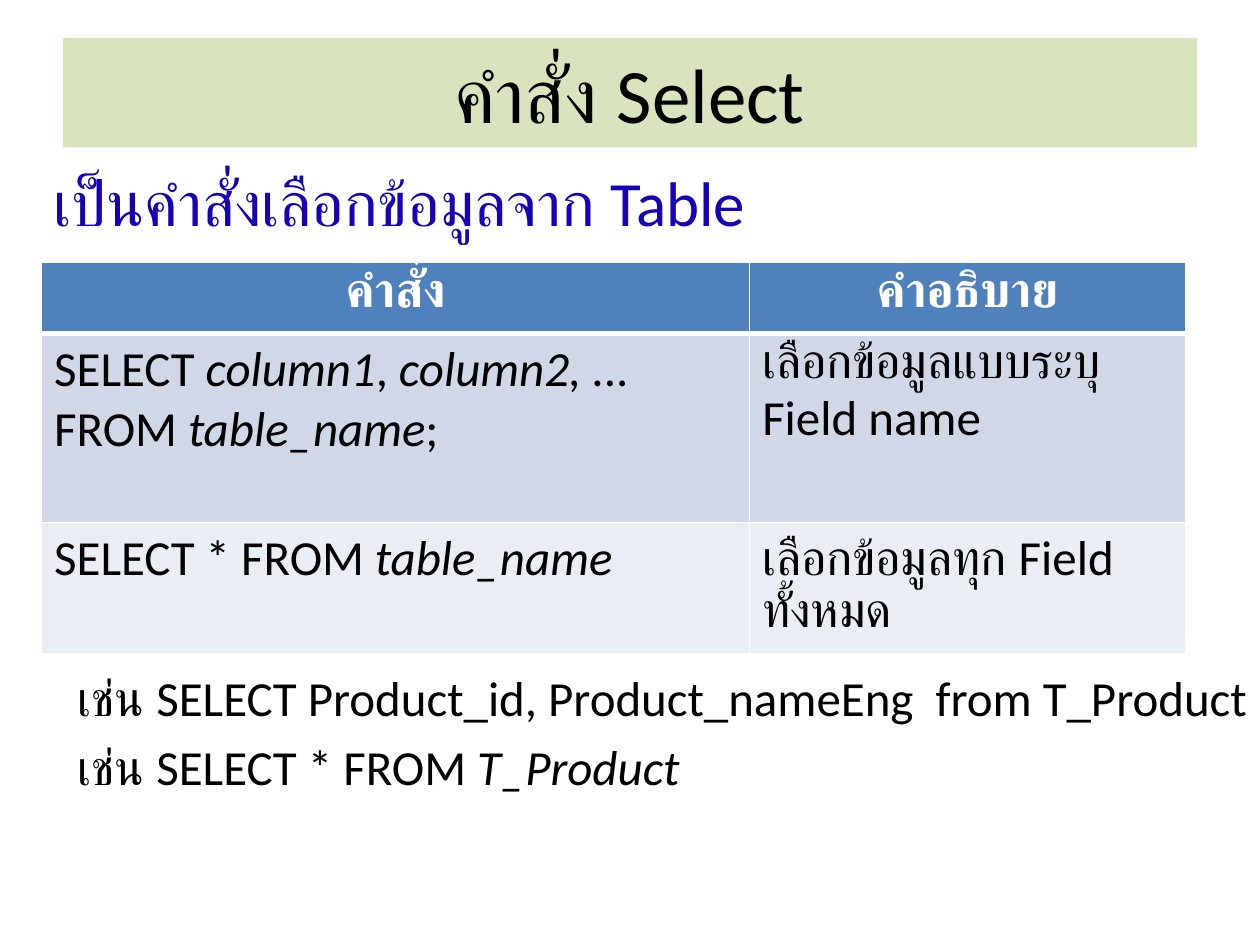
from lxml.etree import SubElement
from pptx import Presentation
from pptx.dml.color import RGBColor
from pptx.enum.shapes import MSO_SHAPE
from pptx.enum.text import MSO_ANCHOR, PP_ALIGN
from pptx.oxml.ns import qn
from pptx.util import Inches, Pt

FONT = "Calibri"
BLACK, WHITE, BLUE = "000000", "FFFFFF", "1600B8"
TITLE_GREEN, HEADER_BLUE = "D7E4BD", "4F81BD"
ROW_FILLS = [HEADER_BLUE, "D0D8E8", "E9EDF4"]
COLUMN_WIDTHS = [5.62, 3.46]
ROW_HEIGHTS = [0.56, 1.5, 1.04]

# A cell is a list of (text, italic) runs; "\n" is a line break
COMMAND_ROWS = [
    [[("คำสั่ง", False)], [("คำอธิบาย", False)]],
    [
        [("SELECT ", False), ("column1", True), (",", False),
         (" column2, ...", True), ("\n", False),
         ("FROM ", False), ("table_name", True), (";", False)],
        [("เลือกข้อมูลแบบระบุ  Field name", False)],
    ],
    [
        [("SELECT * FROM ", False), ("table_name", True)],
        [("เลือกข้อมูลทุก Field ทั้งหมด", False)],
    ],
]
EXAMPLES = [
    [(" เช่น SELECT Product_id, Product_nameEng  from T_Product", False)],
    [(" เช่น SELECT * FROM ", False), ("T_Product", True)],
]


def color(hex_value):
    return RGBColor.from_string(hex_value)


def write_runs(paragraph, runs, size, hex_color, bold=False):
    for text, italic in runs:
        if text == "\n":
            paragraph.add_line_break()
            continue
        run = paragraph.add_run()
        run.text = text
        formats = {"name": FONT, "size": Pt(size), "bold": bold, "italic": italic}
        for name, value in formats.items():
            setattr(run.font, name, value)
        run.font.color.rgb = color(hex_color)


def add_title(slide, text):
    shape = slide.shapes.add_shape(
        MSO_SHAPE.RECTANGLE, Inches(0.5), Inches(0.3), Inches(9), Inches(0.87))
    shape.shadow.inherit = False
    shape.fill.solid()
    shape.fill.fore_color.rgb = color(TITLE_GREEN)
    shape.line.fill.background()
    shape.text_frame.vertical_anchor = MSO_ANCHOR.MIDDLE
    paragraph = shape.text_frame.paragraphs[0]
    paragraph.alignment = PP_ALIGN.CENTER
    write_runs(paragraph, [(text, False)], 44, BLACK)


def add_text(slide, box, lines, size, hex_color, hanging=0, space_before=0):
    frame = slide.shapes.add_textbox(*map(Inches, box)).text_frame
    frame.word_wrap = True
    for index, runs in enumerate(lines):
        paragraph = frame.add_paragraph() if index else frame.paragraphs[0]
        paragraph.space_before = Pt(space_before)
        properties = paragraph._p.get_or_add_pPr()
        properties.set("marL", str(Inches(hanging)))
        properties.set("indent", str(-Inches(hanging)))
        write_runs(paragraph, runs, size, hex_color)


def set_borders(cell, widths):
    properties = cell._tc.get_or_add_tcPr()
    for side, width in zip("LRTB", widths):
        line = SubElement(properties, qn(f"a:ln{side}"), w=str(Pt(width)))
        fill = SubElement(line, qn("a:solidFill"))
        SubElement(fill, qn("a:srgbClr"), val=WHITE)


def add_command_table(slide):
    table = slide.shapes.add_table(
        len(ROW_HEIGHTS), len(COLUMN_WIDTHS), Inches(0.33), Inches(2.08),
        Inches(sum(COLUMN_WIDTHS)), Inches(sum(ROW_HEIGHTS))).table
    for column, width in zip(table.columns, COLUMN_WIDTHS):
        column.width = Inches(width)
    for row_index, cells in enumerate(COMMAND_ROWS):
        table.rows[row_index].height = Inches(ROW_HEIGHTS[row_index])
        is_header = row_index == 0
        for column_index, runs in enumerate(cells):
            cell = table.cell(row_index, column_index)
            top, bottom = 3 if row_index == 1 else 1, 3 if is_header else 1
            set_borders(cell, [1, 1, top, bottom])
            cell.fill.solid()
            cell.fill.fore_color.rgb = color(ROW_FILLS[row_index])
            paragraph = cell.text_frame.paragraphs[0]
            if is_header:
                paragraph.alignment = PP_ALIGN.CENTER
            write_runs(paragraph, runs, 28, WHITE if is_header else BLACK, is_header)


def main():
    presentation = Presentation()
    presentation.slide_width, presentation.slide_height = Inches(10), Inches(7.5)
    slide = presentation.slides.add_slide(presentation.slide_layouts[6])

    # Heading and introduction
    add_title(slide, "คำสั่ง Select")
    add_text(slide, (0.33, 1.25, 8.5, 0.71),
             [[("เป็นคำสั่งเลือกข้อมูลจาก Table", False)]], 36, BLUE)

    # Commands and their meaning, then examples
    add_command_table(slide)
    add_text(slide, (0.42, 5.25, 9.58, 1.42), EXAMPLES, 28, BLACK,
             hanging=0.38, space_before=5.6)

    presentation.save("out.pptx")


if __name__ == "__main__":
    main()
